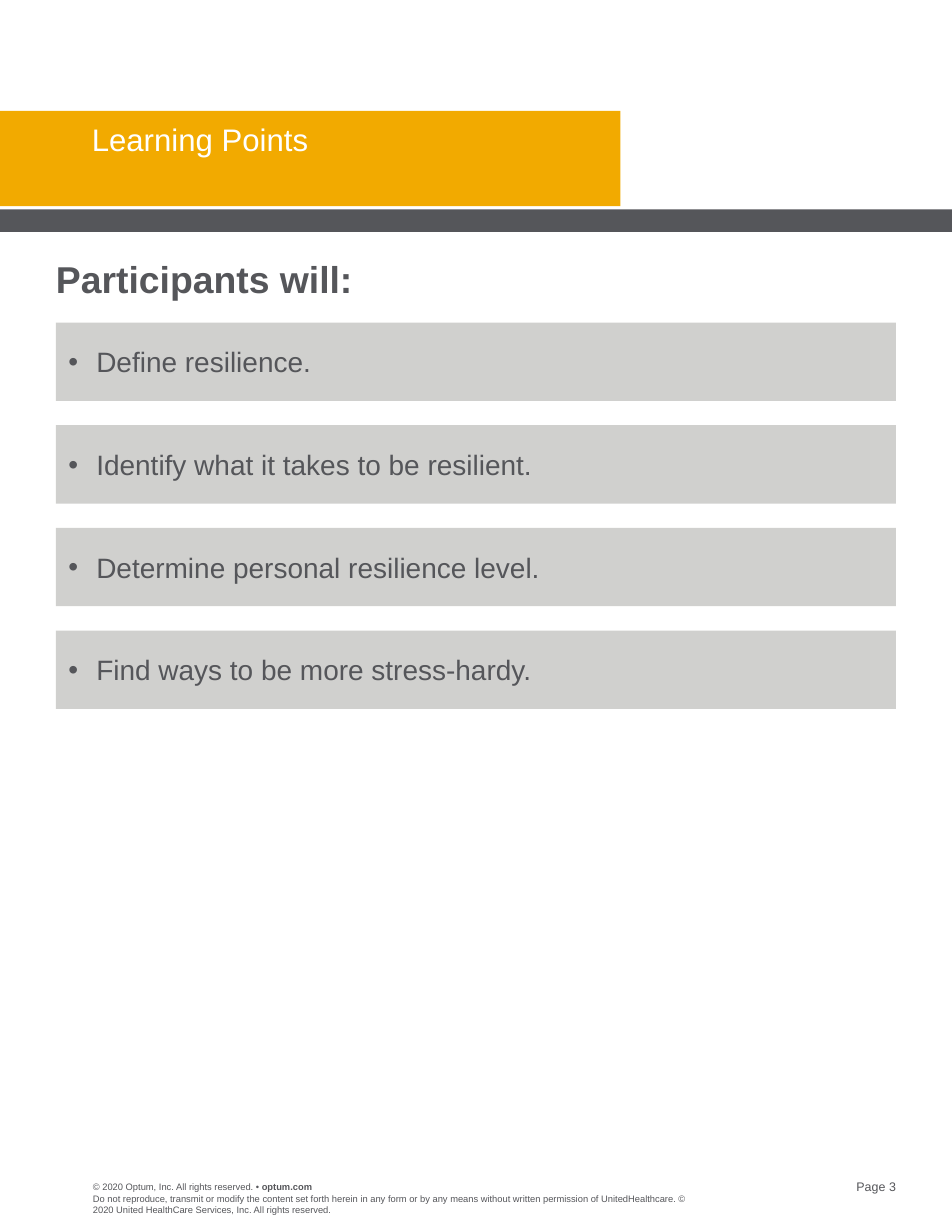
from dataclasses import dataclass

from lxml import etree
from pptx import Presentation
from pptx.dml.color import RGBColor
from pptx.enum.shapes import MSO_SHAPE
from pptx.enum.text import MSO_ANCHOR, PP_ALIGN
from pptx.oxml.ns import qn
from pptx.util import Inches, Pt

RECT = MSO_SHAPE.RECTANGLE
MIDDLE = MSO_ANCHOR.MIDDLE
LEFT, RIGHT = PP_ALIGN.LEFT, PP_ALIGN.RIGHT


@dataclass(frozen=True)
class Theme:
    font: str = "Arial"
    gold: str = "F2AA00"
    slate: str = "55565A"
    gray: str = "D0D0CE"
    white: str = "FFFFFF"
    head: int = 24
    title: int = 20
    body: int = 18
    page: int = 8
    legal: int = 6


@dataclass(frozen=True)
class Box:
    left: float
    top: float
    width: float
    height: float

    def emu(self) -> tuple:
        return tuple(Inches(n) for n in (self.left, self.top, self.width, self.height))


@dataclass(frozen=True)
class Label:
    box: Box
    text: str
    size: int
    color: str
    bold: bool = False
    align: PP_ALIGN = LEFT
    lines: float = 1.0
    tail: str = ""  # bold ending


THEME = Theme()

# Bands and text
BANDS = [
    (Box(0, 0.99, 5.54, 0.85), THEME.gold),
    (Box(0, 1.87, 8.5, 0.2), THEME.slate),
]
LABELS = [
    Label(Box(0.82, 1.11, 4.5, 0.61), "Learning Points", THEME.title, THEME.white, lines=0.9),
    Label(Box(0.5, 2.29, 7.5, 0.4), "Participants will:", THEME.head, THEME.slate, bold=True),
    Label(Box(0.83, 10.55, 2, 0.1), "© 2020 Optum, Inc. All rights reserved. • ",
          THEME.legal, THEME.slate, tail="optum.com"),
    Label(Box(0.83, 10.65, 5.43, 0.2),
          "Do not reproduce, transmit or modify the content set forth herein in any form "
          "or by any means without written permission of UnitedHealthcare. © 2020 United "
          "HealthCare Services, Inc. All rights reserved.", THEME.legal, THEME.slate),
    Label(Box(7.19, 10.53, 0.81, 0.13), "Page 3", THEME.page, THEME.slate, align=RIGHT),
]

# Learning points, evenly spaced from first to last
POINTS = [
    "Define resilience.",
    "Identify what it takes to be resilient.",
    "Determine personal resilience level.",
    "Find ways to be more stress-hardy.",
]
FIRST, LAST = 2.88, 5.63
STEP = (LAST - FIRST) / (len(POINTS) - 1)


def style(run, size: int, color: str, bold: bool = False) -> None:
    font = run.font
    font.name, font.size, font.bold = THEME.font, Pt(size), bold
    font.color.rgb = RGBColor.from_string(color)


def inset(frame, side: float, edge: float) -> None:
    frame.word_wrap = True
    frame.margin_left = frame.margin_right = Inches(side)
    frame.margin_top = frame.margin_bottom = Inches(edge)


def add_bar(slide, box: Box, color: str):
    bar = slide.shapes.add_shape(RECT, *box.emu())
    bar.shadow.inherit = False
    bar.fill.solid()
    bar.fill.fore_color.rgb = RGBColor.from_string(color)
    bar.line.fill.background()
    return bar


def add_label(slide, label: Label) -> None:
    frame = slide.shapes.add_textbox(*label.box.emu()).text_frame
    inset(frame, 0, 0)
    frame.text = label.text
    para = frame.paragraphs[0]
    para.alignment, para.line_spacing = label.align, label.lines
    style(para.runs[0], label.size, label.color, label.bold)
    if label.tail:
        run = para.add_run()
        run.text = label.tail
        style(run, label.size, label.color, bold=True)


def add_bullet(para, indent: float) -> None:
    props = para._p.get_or_add_pPr()
    props.set("marL", str(Inches(indent)))
    props.set("indent", str(-Inches(indent)))
    color = etree.SubElement(props, qn("a:buClr"))
    etree.SubElement(color, qn("a:srgbClr"), val=THEME.slate)
    etree.SubElement(props, qn("a:buFont"), typeface=THEME.font)
    etree.SubElement(props, qn("a:buChar"), char="•")


def add_point(slide, box: Box, text: str) -> None:
    frame = add_bar(slide, box, THEME.gray).text_frame
    inset(frame, 0.11, 0.1)
    frame.vertical_anchor = MIDDLE
    frame.text = text
    para = frame.paragraphs[0]
    para.alignment = LEFT
    add_bullet(para, 0.25)
    style(para.runs[0], THEME.body, THEME.slate)


def main() -> None:
    deck = Presentation()
    deck.slide_width, deck.slide_height = Inches(8.5), Inches(11)
    slide = deck.slides.add_slide(deck.slide_layouts[6])
    for box, color in BANDS:
        add_bar(slide, box, color)
    for label in LABELS:
        add_label(slide, label)
    for i, text in enumerate(POINTS):
        add_point(slide, Box(0.5, FIRST + i * STEP, 7.5, 0.7), text)
    deck.save("out.pptx")


if __name__ == "__main__":
    main()
